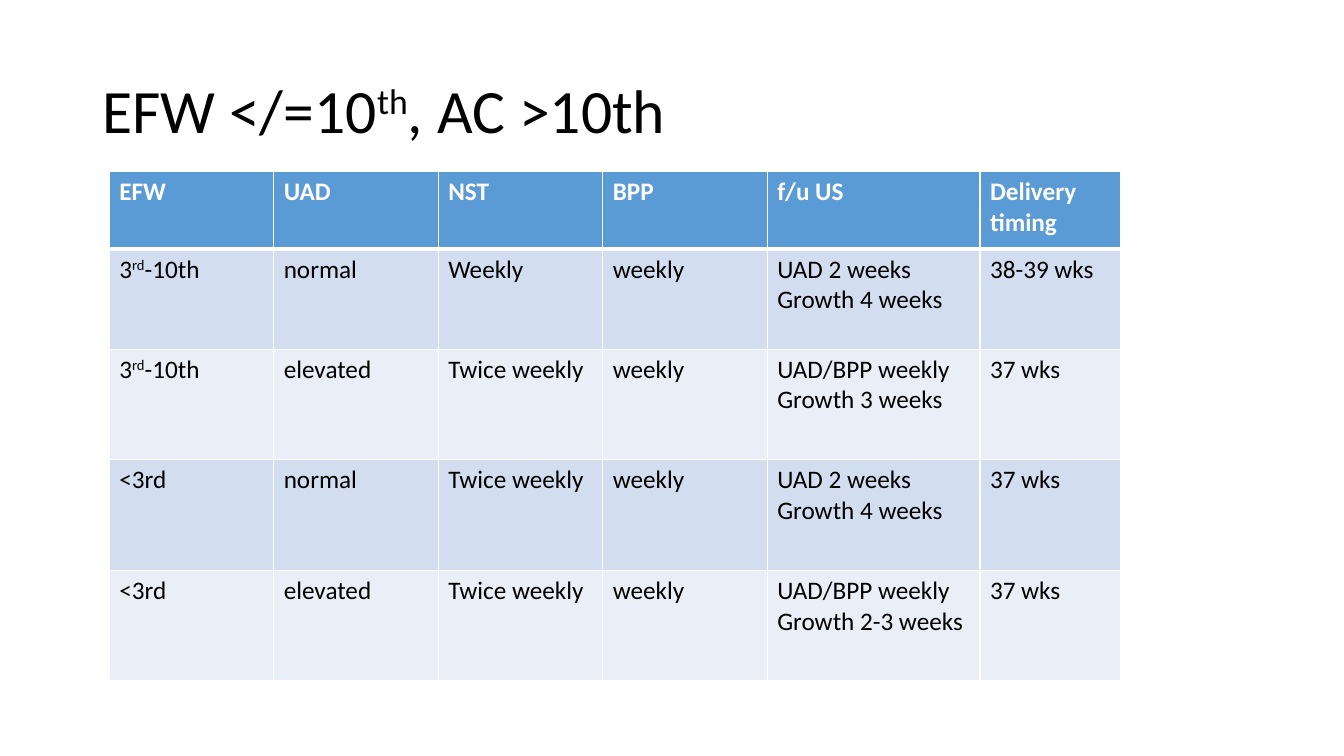
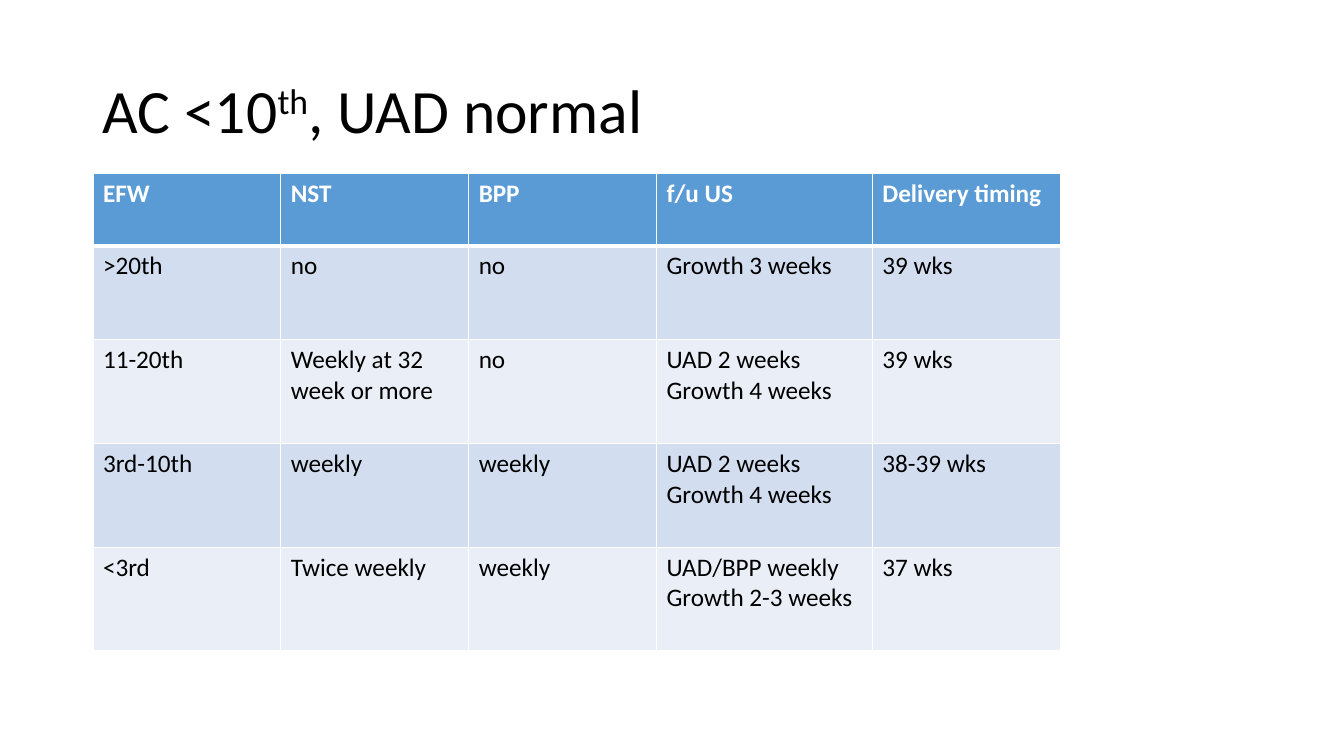
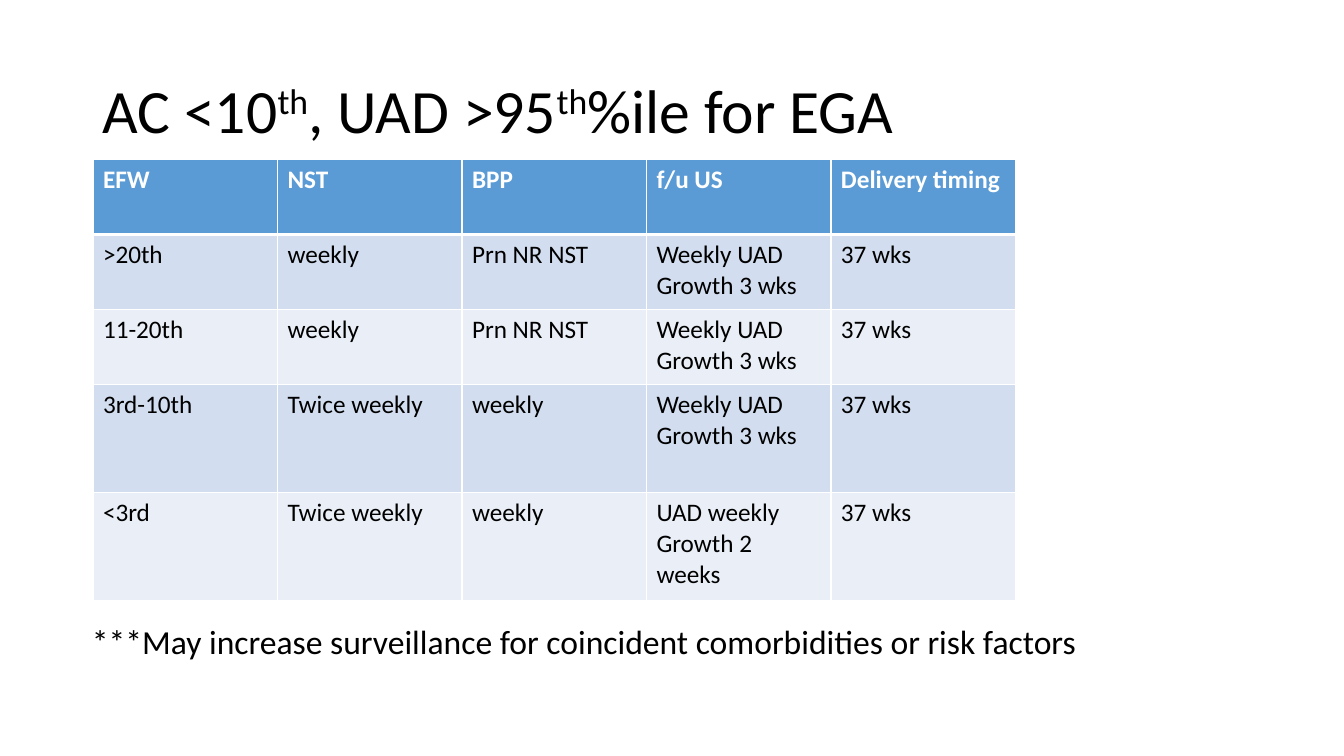
"""Builds three slides of fetal surveillance schedules, one table on each."""
from dataclasses import dataclass

from lxml.etree import SubElement
from pptx import Presentation
from pptx.dml.color import RGBColor
from pptx.enum.text import MSO_ANCHOR
from pptx.oxml.ns import qn
from pptx.slide import Slide
from pptx.table import _Cell
from pptx.text.text import TextFrame
from pptx.util import Pt

FONT = "Calibri"
BLACK = RGBColor(0x00, 0x00, 0x00)
WHITE = RGBColor(0xFF, 0xFF, 0xFF)
HEADER = RGBColor(0x5B, 0x9B, 0xD5)
BANDS = (RGBColor(0xEA, 0xEF, 0xF7), RGBColor(0xD2, 0xDE, 0xEF))
THIN, THICK = Pt(1), Pt(3)


@dataclass(frozen=True)
class Schedule:
    title: str
    left: float
    top: float
    widths: list[float]
    heights: list[float]
    rows: list[list[str]]
    note: str = ""


SCHEDULES = [
    Schedule(
        "EFW </=10^th^, AC >10th", 78, 122.4,
        [117.5] * 4 + [152, 100.5], [55.5, 71.5, 79, 79, 79],
        [
            ["EFW", "UAD", "NST", "BPP", "f/u US", "Delivery timing"],
            ["3^rd^-10th", "normal", "Weekly", "weekly", "UAD 2 weeks\nGrowth 4 weeks", "38-39 wks"],
            ["3^rd^-10th", "elevated", "Twice weekly", "weekly", "UAD/BPP weekly\nGrowth 3 weeks", "37 wks"],
            ["<3rd", "normal", "Twice weekly", "weekly", "UAD 2 weeks\nGrowth 4 weeks", "37 wks"],
            ["<3rd", "elevated", "Twice weekly", "weekly", "UAD/BPP weekly\nGrowth 2-3 weeks", "37 wks"],
        ],
    ),
    Schedule(
        "AC <10^th^, UAD normal", 66.4, 124,
        [134.2] * 3 + [154.2, 134.2], [51.5, 67, 74.2, 74.2, 74.2],
        [
            ["EFW", "NST", "BPP", "f/u US", "Delivery timing"],
            [">20th", "no", "no", "Growth 3 weeks", "39 wks"],
            ["11-20th", "Weekly at 32 week or more", "no", "UAD 2 weeks\nGrowth 4 weeks", "39 wks"],
            ["3rd-10th", "weekly", "weekly", "UAD 2 weeks\nGrowth 4 weeks", "38-39 wks"],
            ["<3rd", "Twice weekly", "weekly", "UAD/BPP weekly\nGrowth 2-3 weeks", "37 wks"],
        ],
    ),
    Schedule(
        "AC <10^th^, UAD >95^th^%ile for EGA", 66.4, 114,
        [131.8] * 5, [53.6] * 3 + [77.2] * 2,
        [
            ["EFW", "NST", "BPP", "f/u US", "Delivery timing"],
            [">20th", "weekly", "Prn NR NST", "Weekly UAD\nGrowth 3 wks", "37 wks"],
            ["11-20th", "weekly", "Prn NR NST", "Weekly UAD\nGrowth 3 wks", "37 wks"],
            ["3rd-10th", "Twice weekly", "weekly", "Weekly UAD\nGrowth 3 wks", "37 wks"],
            ["<3rd", "Twice weekly", "weekly", "UAD weekly\nGrowth 2 weeks", "37 wks"],
        ],
        "***May increase surveillance for coincident comorbidities or risk factors",
    ),
]


def write(tf: TextFrame, text: str, size: float, color: RGBColor = BLACK,
          bold: bool = False, spacing: float = 1.0) -> None:
    for i, line in enumerate(text.split("\n")):
        p = tf.add_paragraph() if i else tf.paragraphs[0]
        p.line_spacing = spacing
        p.font.name, p.font.size, p.font.bold = FONT, Pt(size), bold
        p.font.color.rgb = color
        for j, part in enumerate(line.split("^")):
            r = p.add_run()
            r.text = part
            if j % 2:
                r._r.get_or_add_rPr().set("baseline", "30000")


def add_text(s: Slide, box: tuple[float, float, float, float], text: str,
             size: float, wrap: bool = True, spacing: float = 1.0) -> TextFrame:
    tf = s.shapes.add_textbox(*map(Pt, box)).text_frame
    tf.word_wrap = wrap
    write(tf, text, size, spacing=spacing)
    return tf


def set_borders(cell: _Cell, top: int, bottom: int) -> None:
    tc_pr = cell._tc.get_or_add_tcPr()
    for side, width in (("L", THIN), ("R", THIN), ("T", top), ("B", bottom)):
        ln = SubElement(tc_pr, qn(f"a:ln{side}"), w=str(width))
        SubElement(SubElement(ln, qn("a:solidFill")), qn("a:srgbClr"), val=str(WHITE))


def add_schedule(s: Slide, plan: Schedule) -> None:
    frame = s.shapes.add_table(
        len(plan.rows), len(plan.widths), Pt(plan.left), Pt(plan.top),
        Pt(sum(plan.widths)), Pt(sum(plan.heights)))
    table = frame.table
    for column, width in zip(table.columns, plan.widths):
        column.width = Pt(width)
    for i, (height, texts) in enumerate(zip(plan.heights, plan.rows)):
        table.rows[i].height = Pt(height)
        head = i == 0
        for j, text in enumerate(texts):
            cell = table.cell(i, j)
            set_borders(cell, THICK if i == 1 else THIN, THICK if head else THIN)
            cell.fill.solid()
            cell.fill.fore_color.rgb = HEADER if head else BANDS[i % 2]
            write(cell.text_frame, text, 18, WHITE if head else BLACK, head)


def add_slide(prs: Presentation, plan: Schedule) -> None:
    s = prs.slides.add_slide(prs.slide_layouts[6])
    title = add_text(s, (66, 28.8, 828, 104.4), plan.title, 44, spacing=0.9)
    title.vertical_anchor = MSO_ANCHOR.MIDDLE
    add_schedule(s, plan)
    if plan.note:
        add_text(s, (58.6, 440, 724, 65.5), plan.note, 24, wrap=False)


def main() -> None:
    prs = Presentation()
    prs.slide_width, prs.slide_height = Pt(960), Pt(540)
    for plan in SCHEDULES:
        add_slide(prs, plan)
    prs.save("out.pptx")


if __name__ == "__main__":
    main()
